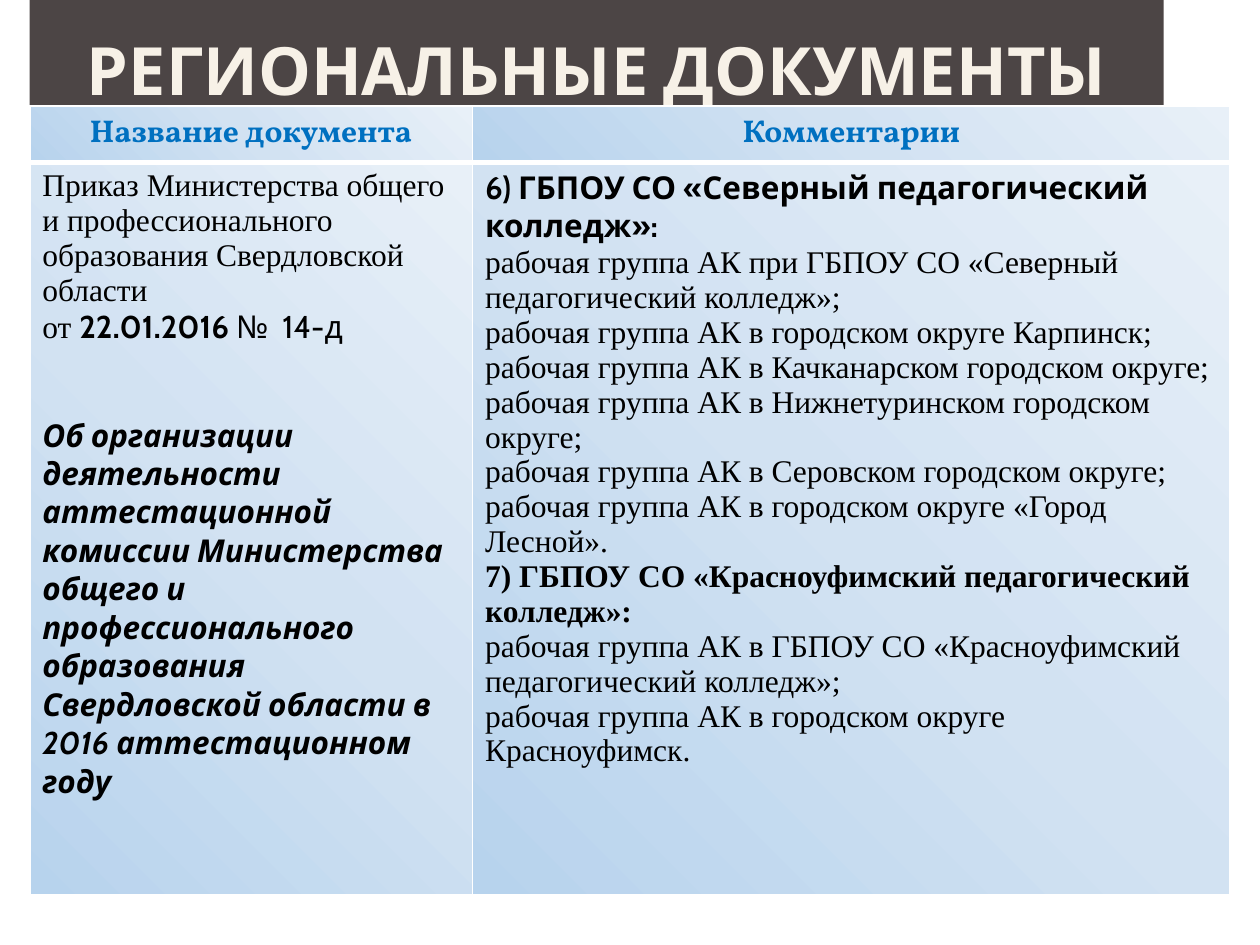
from lxml.etree import SubElement as Sub
from pptx import Presentation
from pptx.dml.color import RGBColor as RGB
from pptx.enum.shapes import MSO_SHAPE as Shape
from pptx.enum.text import MSO_ANCHOR as Anchor, PP_ALIGN as Align
from pptx.oxml import parse_xml
from pptx.oxml.ns import nsdecls, qn
from pptx.util import Pt

BAR = RGB(0x4C, 0x45, 0x45)
CREAM = RGB(0xF7, 0xF1, 0xE7)
EDGE = RGB(0x3D, 0x2E, 0x29)
BLUE = RGB(0x00, 0x70, 0xC0)
BLACK = RGB(0, 0, 0)
WHITE = RGB(0xFF, 0xFF, 0xFF)
STOPS = [
    (0, RGB(0xB7, 0xD3, 0xED)),
    (50, RGB(0xD2, 0xE2, 0xF2)),
    (100, RGB(0xE8, 0xF0, 0xF8)),
]
SANS, SERIF, HEAD = "Cabin", "Times New Roman", "Vollkorn"

NAMES = ["Название документа", "Комментарии"]
ORDER = [
    [("Приказ Министерства общего и профессионального образования Свердловской области", SERIF, False, False)],
    [
        ("от ", SERIF, False, False),
        ("22.01.2016 ", SANS, True, False),
        ("№  14-д", SANS, False, False),
    ],
    [("Об организации деятельности аттестационной комиссии Министерства общего и "
      "профессионального образования  Свердловской области в 2016 аттестационном году",
      SANS, True, True)],
]
GROUPS = [
    ("6) ГБПОУ СО «Северный педагогический колледж»:", SANS, [
        "при ГБПОУ СО «Северный педагогический колледж»;",
        "в городском округе Карпинск;",
        "в Качканарском городском округе;",
        "в Нижнетуринском городском округе;",
        "в Серовском городском округе;",
        "в городском округе «Город Лесной».",
    ]),
    ("7) ГБПОУ СО «Красноуфимский педагогический колледж»:", SERIF, [
        "в ГБПОУ СО «Красноуфимский педагогический колледж»;",
        "в городском округе Красноуфимск.",
    ]),
]


def add_run(para, text, face, size, color, bold=False, slant=False):
    """Append one styled run to a paragraph."""
    run = para.add_run()
    run.text = text
    font = run.font
    font.name, font.size = face, Pt(size)
    font.bold, font.italic = bold, slant
    font.color.rgb = color
    for tag in ("a:ea", "a:cs"):
        Sub(run._r.rPr, qn(tag), typeface=face)
    return run


def fill_text(cell, paras):
    """Write paragraphs of runs into a cell and return them."""
    frame = cell.text_frame
    made = []
    for i, runs in enumerate(paras):
        para = frame.add_paragraph() if i else frame.paragraphs[0]
        for text, face, bold, slant in runs:
            add_run(para, text, face, 18, BLACK, bold, slant)
        made.append(para)
    return made


def style_cell(cell, top, base):
    """Give a cell white borders and a radial gradient fill."""
    props = cell._tc.get_or_add_tcPr()
    for side, width in (("L", 1), ("R", 1), ("T", top), ("B", base)):
        line = Sub(props, qn(f"a:ln{side}"), w=str(Pt(width)))
        Sub(Sub(line, qn("a:solidFill")), qn("a:srgbClr"), val=str(WHITE))
    stops = "".join(
        f'<a:gs pos="{pos * 1000}"><a:srgbClr val="{color}"/></a:gs>'
        for pos, color in STOPS
    )
    props.append(parse_xml(
        f'<a:gradFill {nsdecls("a")} rotWithShape="1"><a:gsLst>{stops}</a:gsLst>'
        '<a:path path="circle"><a:fillToRect t="100000" r="100000"/></a:path>'
        '</a:gradFill>'
    ))


def add_title(slide, left, top, width, height):
    """Draw the dark title bar."""
    bar = slide.shapes.add_shape(
        Shape.RECTANGLE, Pt(left), Pt(top), Pt(width), Pt(height))
    bar.shadow.inherit = False
    bar.fill.solid()
    bar.fill.fore_color.rgb = BAR
    bar.line.fill.background()
    frame = bar.text_frame
    frame.word_wrap = True
    frame.vertical_anchor = Anchor.BOTTOM
    frame.margin_left = frame.margin_right = Pt(3.6)
    frame.margin_top = frame.margin_bottom = 0
    para = frame.paragraphs[0]
    para.alignment = Align.CENTER
    run = add_run(para, "РЕГИОНАЛЬНЫЕ ДОКУМЕНТЫ", SANS, 38, CREAM, True)
    run._r.rPr.insert(0, parse_xml(
        f'<a:ln {nsdecls("a")} w="{Pt(0.04)}"><a:solidFill>'
        f'<a:srgbClr val="{EDGE}"/></a:solidFill></a:ln>'
    ))


def add_grid(slide, left, top, width, height):
    """Draw the table of documents and comments."""
    table = slide.shapes.add_table(
        2, 2, Pt(left), Pt(top), Pt(width), Pt(height)).table
    first, head = 253, 31.5
    table.columns[0].width = Pt(first)
    table.columns[1].width = Pt(width - first)
    table.rows[0].height = Pt(head)
    table.rows[1].height = Pt(height - head)
    for col, name in enumerate(NAMES):
        cell = table.cell(0, col)
        style_cell(cell, 1, 3)
        style_cell(table.cell(1, col), 3, 1)
        para = cell.text_frame.paragraphs[0]
        para.alignment = Align.CENTER
        add_run(para, name, HEAD, 18, BLUE, True)
    paras = fill_text(table.cell(1, 0), ORDER)
    paras[-1].space_before = Pt(40)
    notes = []
    for name, face, places in GROUPS:
        notes.append([(name, face, True, False)])
        notes += [[(f"рабочая группа АК {place}", SERIF, False, False)]
                  for place in places]
    fill_text(table.cell(1, 1), notes)


def main():
    """Build and save the slide."""
    deck = Presentation()
    deck.slide_width, deck.slide_height = Pt(720), Pt(540)
    slide = deck.slides.add_slide(deck.slide_layouts[6])
    add_title(slide, 17, 0, 648, 62)
    add_grid(slide, 17, 60.5, 686, 450)
    deck.save("out.pptx")


if __name__ == "__main__":
    main()
